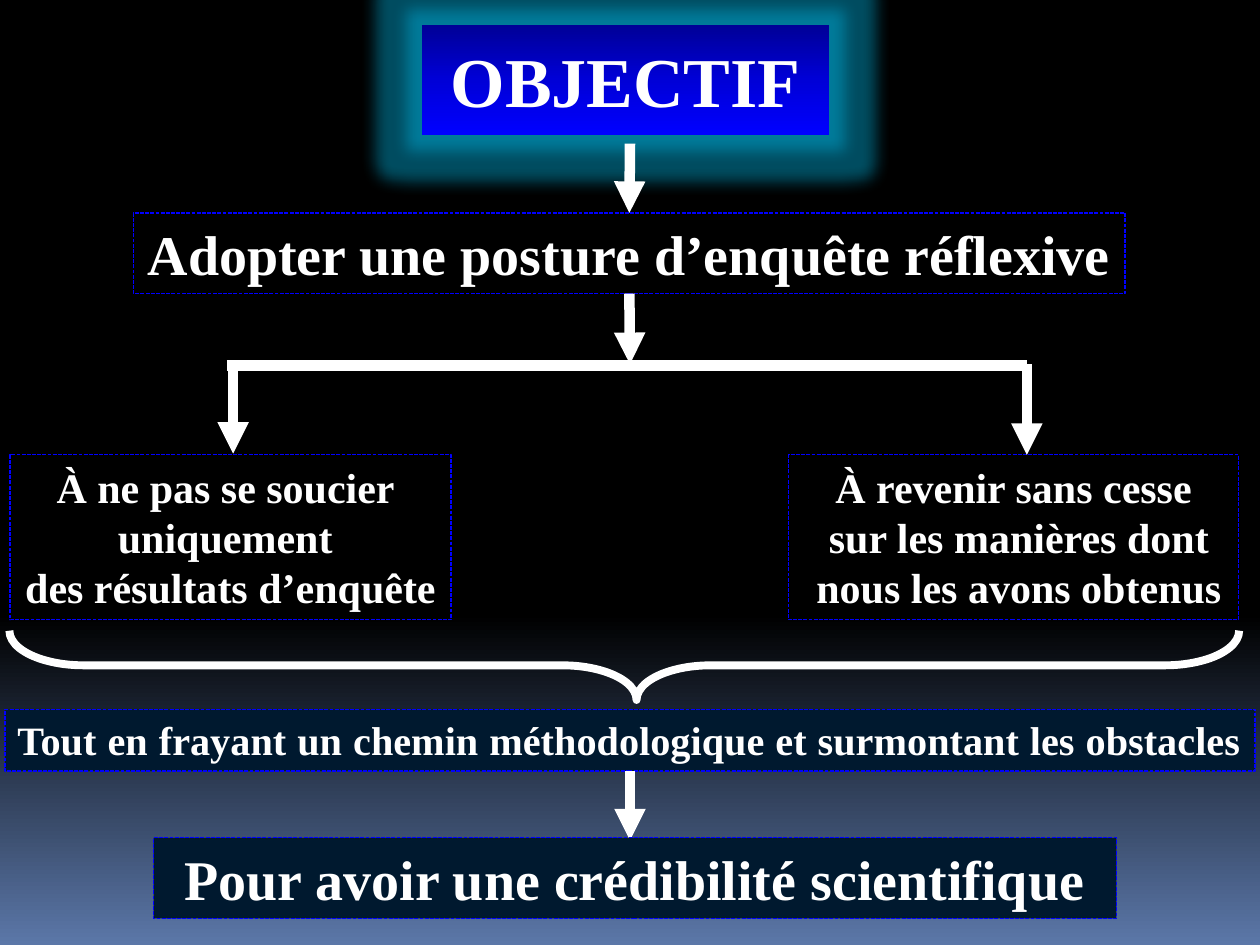
from lxml import etree
from pptx import Presentation
from pptx.dml.color import RGBColor
from pptx.enum import dml, shapes, text
from pptx.oxml.ns import qn
from pptx.util import Inches, Pt

WHITE = RGBColor(0xFF, 0xFF, 0xFF)
BLUE = RGBColor(0x00, 0x00, 0xFF)
NAVY = RGBColor(0x00, 0x19, 0x2F)
BLACK = RGBColor(0x00, 0x00, 0x00)
SLATE = RGBColor(0x5B, 0x77, 0xA8)
DARK_BLUE = RGBColor(0x00, 0x00, 0x97)
MID_BLUE = RGBColor(0x00, 0x00, 0xD7)
GLOW = RGBColor(0x00, 0xC0, 0xF0)
CENTER, JUSTIFY = text.PP_ALIGN.CENTER, text.PP_ALIGN.JUSTIFY


def fill_downward(fill, owner, stops):
    """Give fill a top-to-bottom gradient; owner is the element holding it."""
    fill.gradient()
    fill.gradient_angle = 270
    stop_list = next(owner.iter(qn("a:gsLst")))
    for old_stop in list(stop_list):
        stop_list.remove(old_stop)
    for percent, color in stops:
        stop = etree.SubElement(stop_list, qn("a:gs"), pos=str(percent * 1000))
        etree.SubElement(stop, qn("a:srgbClr"), val=str(color))


def add_box(bounds, lines, size, color=None, align=CENTER):
    box = page.shapes.add_shape(shapes.MSO_SHAPE.RECTANGLE, *map(Inches, bounds))
    box.shadow.inherit = False
    if color is None:
        box.fill.background()
    else:
        box.fill.solid()
        box.fill.fore_color.rgb = color
    box.line.color.rgb = BLUE
    box.line.width = Pt(0.75)
    box.line.dash_style = dml.MSO_LINE.SQUARE_DOT
    frame = box.text_frame
    frame.word_wrap = align == JUSTIFY
    frame.vertical_anchor = text.MSO_ANCHOR.TOP
    for index, line in enumerate(lines):
        para = frame.add_paragraph() if index else frame.paragraphs[0]
        para.alignment = align
        span = para.add_run()
        span.text = line
        span.font.name = "Times New Roman"
        span.font.size = Pt(size)
        span.font.bold = True
        span.font.color.rgb = WHITE
    return box


deck = Presentation()
deck.slide_width, deck.slide_height = Inches(10), Inches(7.5)
page = deck.slides.add_slide(deck.slide_layouts[6])
fill_downward(page.background.fill, page.element,
              [(0, BLACK), (65, BLACK), (100, SLATE)])

# Title with its halo
title = add_box((3.35, 0.2, 3.23, 0.87), ["OBJECTIF"], 40)
title.line.fill.background()
title.text_frame.vertical_anchor = text.MSO_ANCHOR.MIDDLE
fill_downward(title.fill, title.element,
              [(0, DARK_BLUE), (50, MID_BLUE), (100, BLUE)])
effects = next(title.element.iter(qn("a:effectLst")))
glow = etree.SubElement(effects, qn("a:glow"), rad=str(Pt(18)))
glow_color = etree.SubElement(glow, qn("a:srgbClr"), val=str(GLOW))
etree.SubElement(glow_color, qn("a:alpha"), val="40000")

# Statements
posture = add_box((1.06, 1.69, 7.87, 0.64),
                  ["Adopter une posture d’enquête réflexive"], 32)
add_box((0.08, 3.61, 3.5, 1.31),
        ["À ne pas se soucier ", "uniquement ", "des résultats d’enquête"], 24)
add_box((6.26, 3.61, 3.57, 1.31),
        ["À revenir sans cesse", " sur les manières dont", " nous les avons obtenus"], 24)
method = add_box((0.04, 5.63, 9.92, 0.49),
                 ["Tout en frayant un chemin méthodologique et surmontant les obstacles "],
                 23, NAVY, JUSTIFY)

# Connectors: start, end, arrowhead, box joined at the start, box joined at the end
links = [
    ((5, 1.14), (5, 1.69), True, None, posture),
    ((5, 2.33), (5, 2.89), True, posture, None),
    ((5, 6.12), (5, 6.67), True, method, None),
    ((1.85, 2.9), (1.85, 3.6), True, None, None),
    ((1.8, 2.9), (8.15, 2.9), False, None, None),
    ((8.15, 2.89), (8.15, 3.61), True, None, None),
]
for start, end, has_arrow, source, target in links:
    link = page.shapes.add_connector(shapes.MSO_CONNECTOR.STRAIGHT,
                                     *map(Inches, start + end))
    if source is not None:
        link.begin_connect(source, 2)
    if target is not None:
        link.end_connect(target, 0)
    link.line.color.rgb = WHITE
    link.line.width = Pt(6)
    if has_arrow:
        etree.SubElement(link.line.fill and next(link.element.iter(qn("a:ln"))),
                         qn("a:tailEnd"), type="triangle")
    etree.SubElement(link.element.spPr, qn("a:effectLst"))

# Brace gathering both branches
brace = page.shapes.add_shape(shapes.MSO_SHAPE.LEFT_BRACE,
                              *map(Inches, (4.68, 0.4, 0.55, 9.76)))
brace.rotation = 270
brace.adjustments[0], brace.adjustments[1] = 1.07, 0.51
brace.shadow.inherit = False
brace.fill.background()
brace.line.color.rgb = WHITE
brace.line.width = Pt(4.5)

add_box((1.22, 6.65, 7.64, 0.64),
        ["Pour avoir une crédibilité scientifique"], 32, NAVY)

deck.save("out.pptx")
